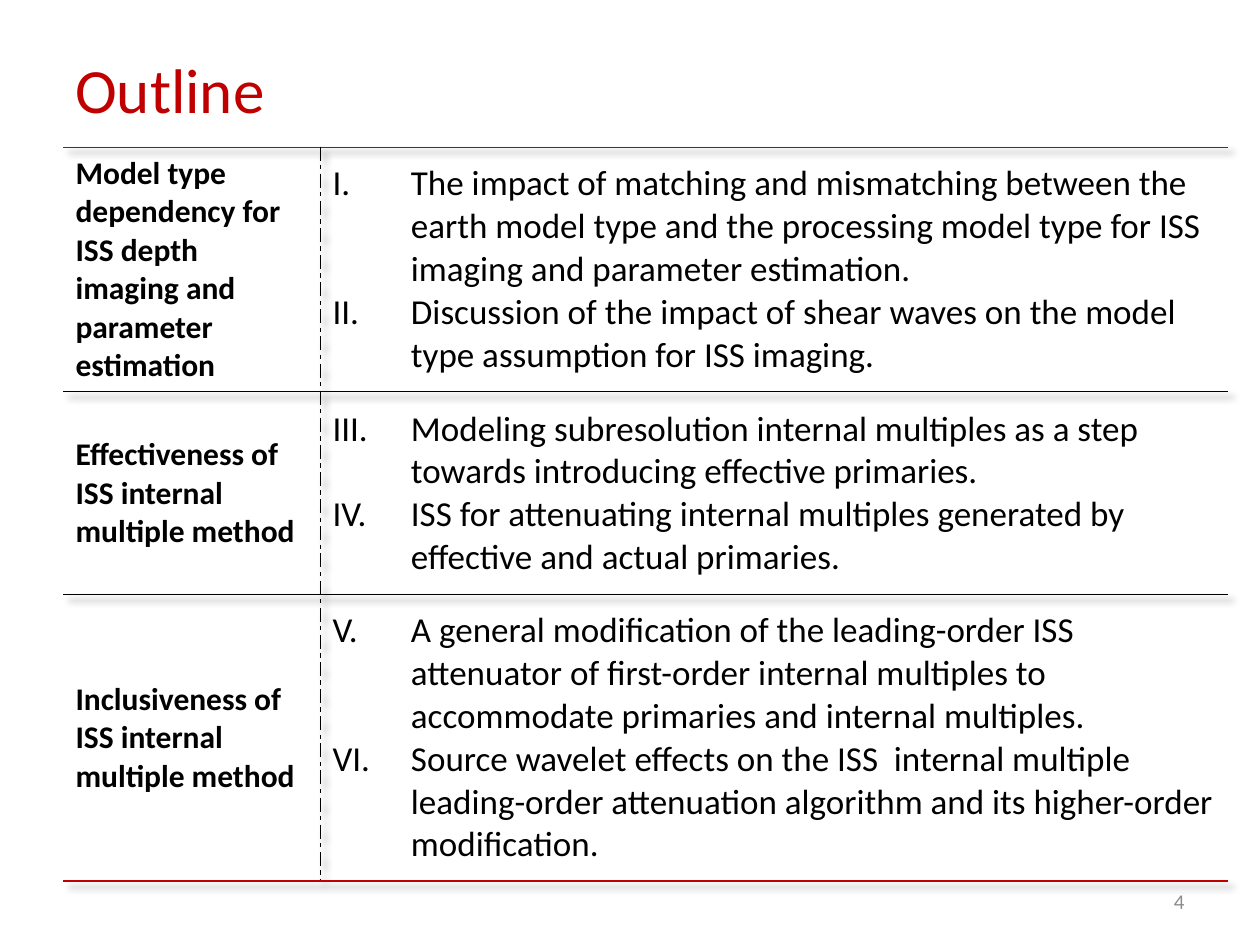
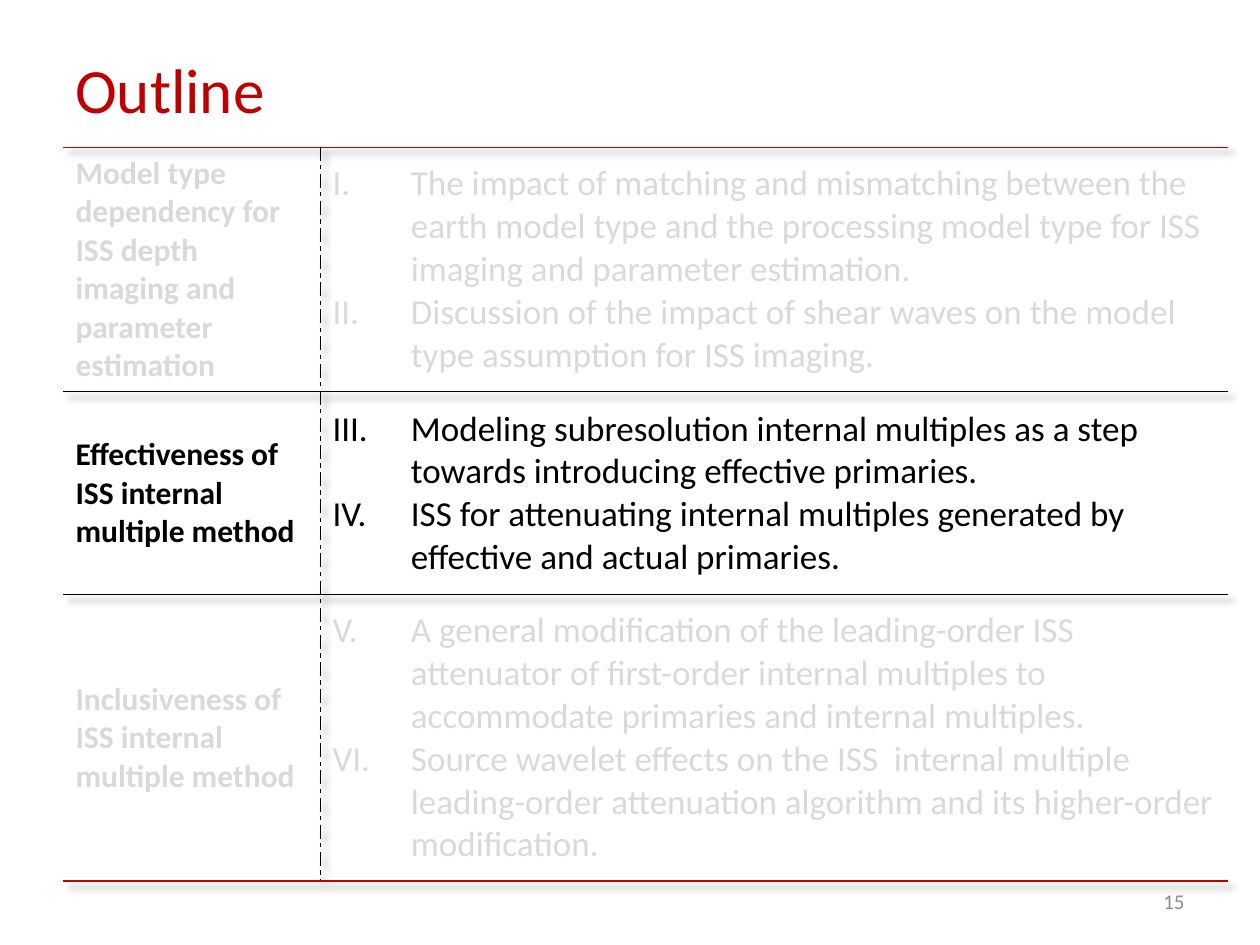
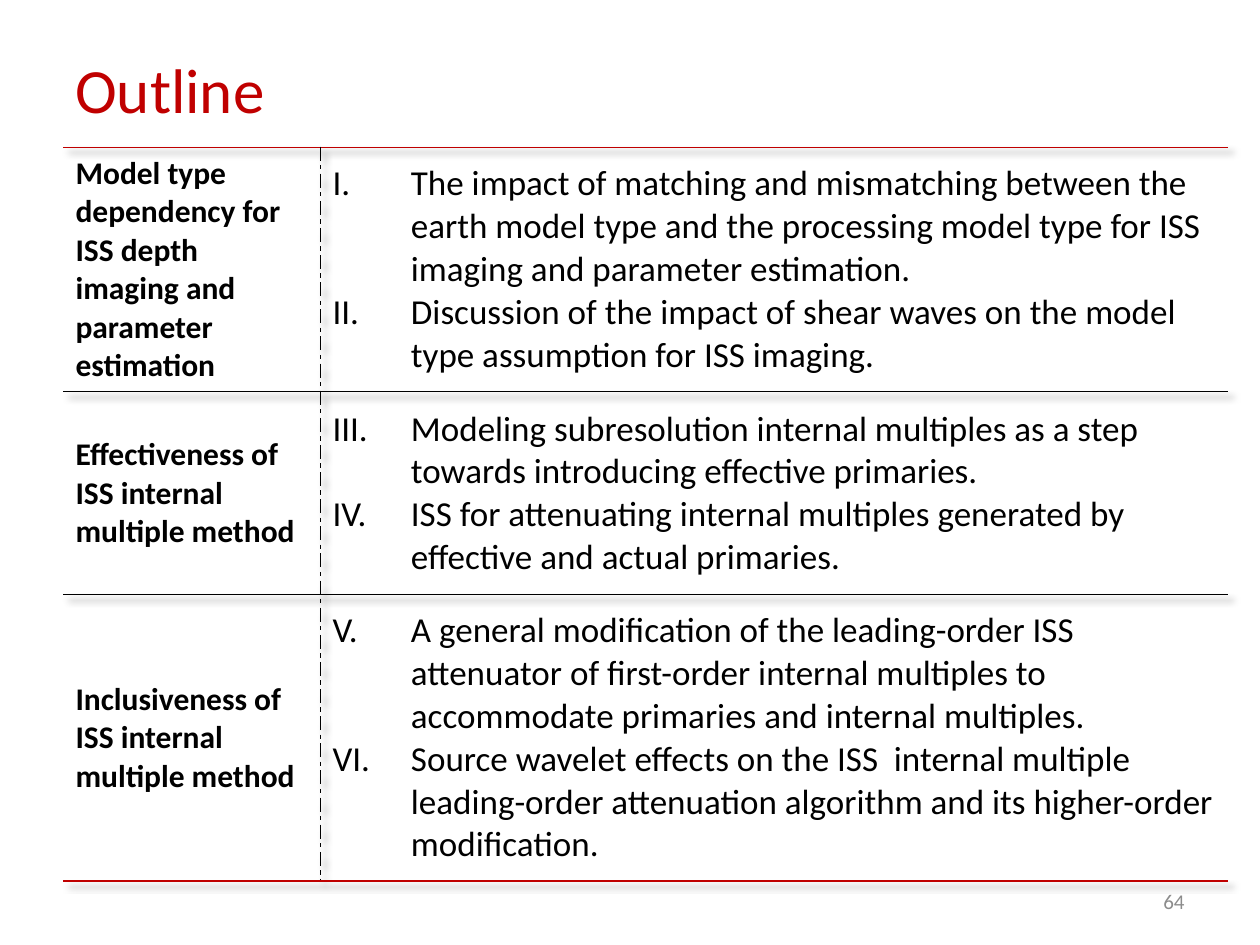
from dataclasses import dataclass
from typing import Optional

from lxml import etree
from pptx import Presentation
from pptx.dml.color import RGBColor
from pptx.enum.text import MSO_ANCHOR, PP_ALIGN
from pptx.oxml.ns import qn
from pptx.util import Cm, Pt

RED = RGBColor(0xC0, 0x00, 0x00)
BLACK = RGBColor(0x00, 0x00, 0x00)
FADED = RGBColor(0xD9, 0xD9, 0xD9)
GREY = RGBColor(0x8C, 0x8C, 0x8C)
FONT = "Calibri"
MIDDLE = MSO_ANCHOR.MIDDLE
LEFT = PP_ALIGN.LEFT
RIGHT = PP_ALIGN.RIGHT
PLAIN_STYLE = "{2D5ABB26-0587-4C30-8999-92F81FD0307C}"

MARGIN = Cm(1.27)
OUTLINE_TOP = Cm(2.97)
COLUMN_WIDTHS = (Cm(5.18), Cm(18.31))
HANGING_INDENT = Cm(1.58)


@dataclass(frozen=True)
class Section:
    heading: str
    topics: tuple[str, ...]
    height: Cm


@dataclass(frozen=True)
class OutlineSlide:
    number: int
    current: Optional[int] = None


@dataclass(frozen=True)
class Rule:
    color: RGBColor
    width: Pt
    dash: str = "solid"


FRAME_RULE = Rule(RED, Pt(1))
ROW_RULE = Rule(BLACK, Pt(0.5))
COLUMN_RULE = Rule(BLACK, Pt(0.5), "lgDashDot")

SECTIONS = (
    Section(
        "Model type dependency for ISS depth imaging and parameter estimation",
        (
            "The impact of matching and mismatching between the earth model type "
            "and the processing model type for ISS imaging and parameter estimation.",
            "Discussion of the impact of shear waves on the model type assumption "
            "for ISS imaging.",
        ),
        Cm(4.93),
    ),
    Section(
        "Effectiveness of ISS internal multiple method",
        (
            "Modeling subresolution internal multiples as a step towards "
            "introducing effective primaries.",
            "ISS for attenuating internal multiples generated by effective and "
            "actual primaries.",
        ),
        Cm(4.09),
    ),
    Section(
        "Inclusiveness of ISS internal multiple method",
        (
            "A general modification of the leading-order ISS attenuator of "
            "first-order internal multiples to accommodate primaries and internal "
            "multiples.",
            "Source wavelet effects on the ISS  internal multiple leading-order "
            "attenuation algorithm and its higher-order modification.",
        ),
        Cm(5.77),
    ),
)

SLIDES = (OutlineSlide(4), OutlineSlide(15, current=1), OutlineSlide(64))


def style_paragraph(paragraph, size: float, color: RGBColor, bold: bool = False) -> None:
    font = paragraph.font
    font.name = FONT
    font.size = Pt(size)
    font.bold = bold
    font.color.rgb = color


def add_label(slide, text: str, box: tuple, size: float, color: RGBColor, align) -> None:
    label = slide.shapes.add_textbox(*box)
    frame = label.text_frame
    frame.word_wrap = True
    frame.vertical_anchor = MIDDLE
    paragraph = frame.paragraphs[0]
    paragraph.text = text
    paragraph.alignment = align
    style_paragraph(paragraph, size, color)


def set_border(cell, side: str, rule: Optional[Rule]) -> None:
    line = etree.SubElement(cell._tc.get_or_add_tcPr(), qn(f"a:ln{side}"))
    if rule is None:
        etree.SubElement(line, qn("a:noFill"))
        return
    line.set("w", str(int(rule.width)))
    fill = etree.SubElement(line, qn("a:solidFill"))
    etree.SubElement(fill, qn("a:srgbClr"), val=str(rule.color))
    etree.SubElement(line, qn("a:prstDash"), val=rule.dash)


def frame_cell(cell, row: int, column: int) -> None:
    last = len(SECTIONS) - 1
    set_border(cell, "L", COLUMN_RULE if column == 1 else None)
    set_border(cell, "R", COLUMN_RULE if column == 0 else None)
    set_border(cell, "T", FRAME_RULE if row == 0 else ROW_RULE)
    set_border(cell, "B", FRAME_RULE if row == last else ROW_RULE)
    cell.fill.background()
    cell.vertical_anchor = MIDDLE


def number_paragraph(paragraph, number: int) -> None:
    properties = paragraph._p.get_or_add_pPr()
    properties.set("marL", str(int(HANGING_INDENT)))
    properties.set("indent", str(-int(HANGING_INDENT)))
    etree.SubElement(
        properties, qn("a:buAutoNum"), type="romanUcPeriod", startAt=str(number)
    )


def add_rule_shadow(table) -> None:
    properties = table._tbl.tblPr
    effects = etree.Element(qn("a:effectLst"))
    shadow = etree.SubElement(
        effects,
        qn("a:outerShdw"),
        blurRad=str(int(Pt(4))),
        dist=str(int(Pt(4))),
        dir="2700000",
        algn="tl",
        rotWithShape="0",
    )
    color = etree.SubElement(shadow, qn("a:srgbClr"), val=str(BLACK))
    etree.SubElement(color, qn("a:alpha"), val="40000")
    properties.insert(0, effects)
    properties.find(qn("a:tableStyleId")).text = PLAIN_STYLE


def add_outline(slide, current: Optional[int]) -> None:
    table = slide.shapes.add_table(
        len(SECTIONS),
        len(COLUMN_WIDTHS),
        MARGIN,
        OUTLINE_TOP,
        sum(COLUMN_WIDTHS),
        sum(section.height for section in SECTIONS),
    ).table
    table.first_row = False
    table.horz_banding = False
    add_rule_shadow(table)
    for column, width in enumerate(COLUMN_WIDTHS):
        table.columns[column].width = width

    topic_number = 1
    for row, section in enumerate(SECTIONS):
        table.rows[row].height = section.height
        color = BLACK if current in (None, row) else FADED
        heading_cell, topics_cell = table.cell(row, 0), table.cell(row, 1)
        frame_cell(heading_cell, row, 0)
        frame_cell(topics_cell, row, 1)
        heading_cell.text = section.heading
        style_paragraph(heading_cell.text_frame.paragraphs[0], 18, color, bold=True)
        topics_cell.text = "\n".join(section.topics)
        for paragraph in topics_cell.text_frame.paragraphs:
            number_paragraph(paragraph, topic_number)
            style_paragraph(paragraph, 20, color)
            topic_number += 1


def main() -> None:
    presentation = Presentation()
    presentation.slide_width = Cm(25.4)
    presentation.slide_height = Cm(19.05)
    title_box = (MARGIN, Cm(0.2), Cm(22.86), Cm(3.18))
    number_box = (Cm(18.21), Cm(17.65), Cm(5.92), Cm(1.02))
    for outline in SLIDES:
        slide = presentation.slides.add_slide(presentation.slide_layouts[6])
        add_outline(slide, outline.current)
        add_label(slide, "Outline", title_box, 36, RED, LEFT)
        add_label(slide, str(outline.number), number_box, 12, GREY, RIGHT)
    presentation.save("out.pptx")


if __name__ == "__main__":
    main()
